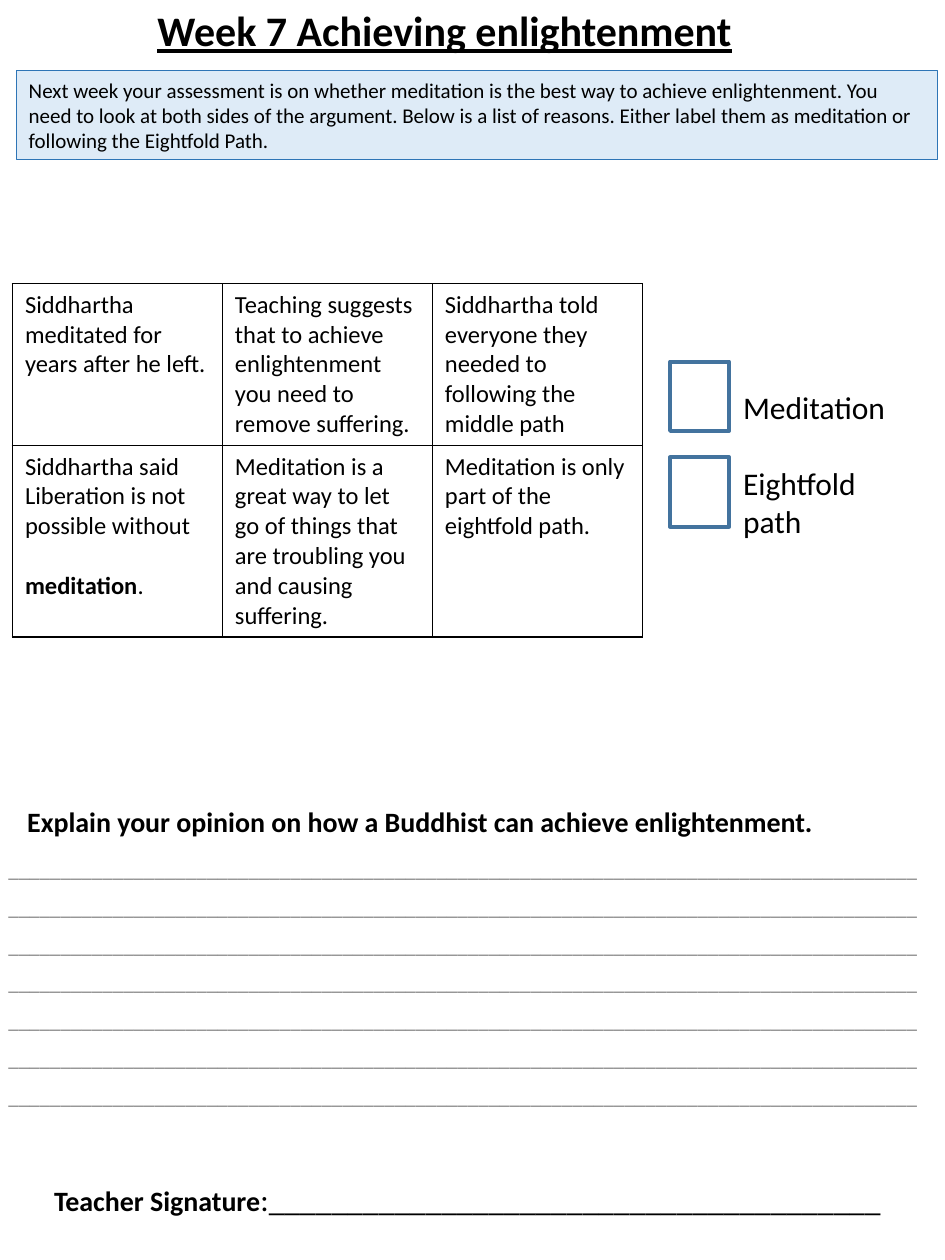
from lxml.etree import SubElement
from pptx import Presentation
from pptx.dml.color import RGBColor
from pptx.enum.shapes import MSO_SHAPE
from pptx.enum.text import MSO_ANCHOR, MSO_AUTO_SIZE, PP_ALIGN
from pptx.oxml.ns import qn
from pptx.util import Cm, Pt

FONT = "Calibri"
BLACK = "000000"
REASONS = [
    [
        [[("Siddhartha meditated for years after he left.", False)]],
        [[("Teaching suggests that to achieve enlightenment you need to remove suffering.", False)]],
        [[("Siddhartha told everyone they needed to following the middle path", False)]],
    ],
    [
        [[("Siddhartha said Liberation is not possible without", False)],
         [("meditation", True), (".", False)]],
        [[("Meditation is a great way to let go of things that are troubling you and causing suffering.", False)]],
        [[("Meditation is only part of the eightfold path.", False)]],
    ],
]


def rgb(value):
    return RGBColor.from_string(value)


def add_run(paragraph, text, size, bold=False, color=BLACK, underline=None):
    run = paragraph.add_run()
    run.text = text
    font = run.font
    font.name, font.size, font.bold, font.underline = FONT, Pt(size), bold, underline
    font.color.rgb = rgb(color)


def write(frame, paragraphs, size, gap=0, spacing=None, color=BLACK):
    for index, runs in enumerate(paragraphs):
        paragraph = frame.add_paragraph() if index else frame.paragraphs[0]
        paragraph.alignment = PP_ALIGN.LEFT
        if index and gap:
            paragraph.space_before = Pt(gap)
        if spacing:
            paragraph.line_spacing = spacing
        for text, bold in runs:
            add_run(paragraph, text, size, bold, color)


def add_text(slide, left, top, width, height, wrap=True):
    frame = slide.shapes.add_textbox(Cm(left), Cm(top), Cm(width), Cm(height)).text_frame
    frame.word_wrap = wrap
    return frame


def add_box(slide, left, top, width, height, line, weight, fill=None):
    box = slide.shapes.add_shape(MSO_SHAPE.RECTANGLE, Cm(left), Cm(top), Cm(width), Cm(height))
    box.shadow.inherit = False
    if fill:
        box.fill.solid()
        box.fill.fore_color.rgb = rgb(fill)
    else:
        box.fill.background()
    box.line.color.rgb = rgb(line)
    box.line.width = Pt(weight)
    return box


def set_title(slide, text):
    title = slide.shapes.title
    title.left, title.top, title.width, title.height = Cm(2.92), Cm(-0.03), Cm(13.41), Cm(1.27)
    frame = title.text_frame
    frame.auto_size = MSO_AUTO_SIZE.NONE
    frame.vertical_anchor = MSO_ANCHOR.TOP
    heading = frame.paragraphs[0]
    heading.alignment = PP_ALIGN.LEFT
    add_run(heading, text, 24, True, underline=True)


def add_borders(cell):
    properties = cell._tc.get_or_add_tcPr()
    for side in ("lnL", "lnR", "lnT", "lnB"):
        border = SubElement(properties, qn(f"a:{side}"), w=str(Pt(1)))
        fill = SubElement(border, qn("a:solidFill"))
        SubElement(fill, qn("a:srgbClr"), val=BLACK)


def add_reasons(slide):
    table = slide.shapes.add_table(2, 3, Cm(0.25), Cm(5.72), Cm(12.7), Cm(7.03)).table
    for row, height in zip(table.rows, (3.23, 3.8)):
        row.height = Cm(height)
    for row_index, reasons in enumerate(REASONS):
        for column_index, reason in enumerate(reasons):
            cell = table.cell(row_index, column_index)
            add_borders(cell)
            cell.fill.solid()
            cell.fill.fore_color.rgb = rgb("FFFFFF")
            write(cell.text_frame, reason, 14, gap=17)


def main():
    presentation = Presentation()
    presentation.slide_width, presentation.slide_height = Cm(19.05), Cm(25.4)
    slide = presentation.slides.add_slide(presentation.slide_layouts[5])

    set_title(slide, "Week 7 Achieving enlightenment")
    instructions = add_box(slide, 0.33, 1.42, 18.57, 1.8, "2E75B6", 0.75, "DEEBF7")
    write(instructions.text_frame, [[(
        "Next week your assessment is on whether meditation is the best way to achieve "
        "enlightenment. You need to look at both sides of the argument. Below is a list of "
        "reasons. Either label them as meditation or following the Eightfold Path.", False)]], 12)

    add_reasons(slide)
    for index in range(2):
        add_box(slide, 13.51, 7.29 + index * 1.93, 1.19, 1.4, "43739E", 2.25)
    key = add_text(slide, 14.73, 7.7, 3.61, 3.33)
    write(key, [[("Meditation", False)], [("Eightfold path", False)]], 18, gap=22)

    answer = add_text(slide, -0.08, 16.89, 18.97, 5.64)
    write(answer, [[("_" * 87, False)]] * 7, 12, spacing=1.5, color="808080")
    question = add_text(slide, 0.3, 16.1, 16.69, 0.94, wrap=False)
    write(question, [[("Explain your opinion on how a Buddhist can achieve enlightenment.", True)]], 16)

    signature = add_text(slide, 0.84, 23.67, 18.21, 1.02)
    write(signature, [[("Teacher Signature", True)]], 16)
    add_run(signature.paragraphs[0], ":" + "_" * 39, 18)

    presentation.save("out.pptx")


if __name__ == "__main__":
    main()
